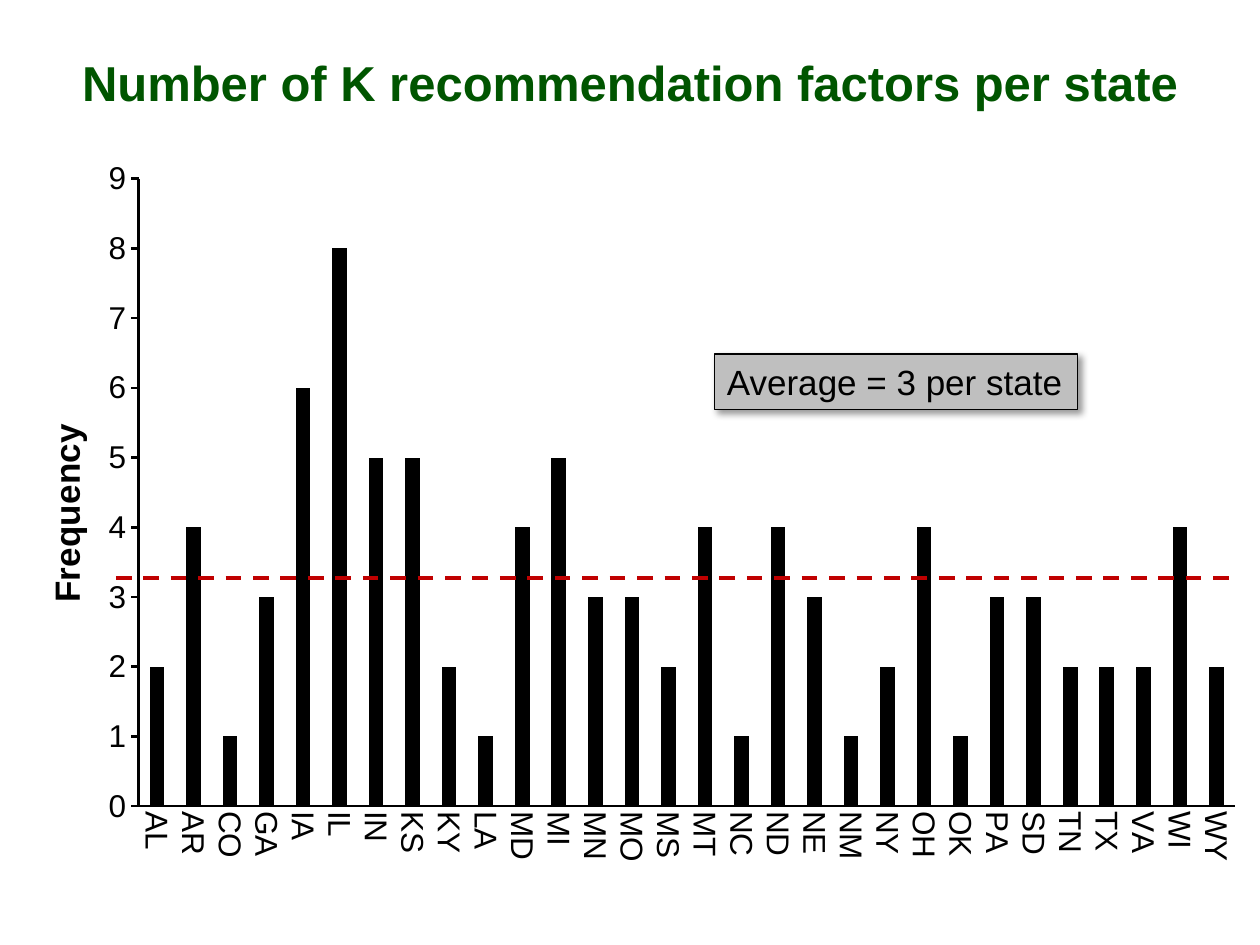
from lxml import etree
from pptx import Presentation
from pptx.chart.data import CategoryChartData
from pptx.dml.color import RGBColor
from pptx.enum.chart import XL_CHART_TYPE as Kind, XL_TICK_MARK as Tick
from pptx.enum.dml import MSO_LINE as Dash
from pptx.enum.shapes import MSO_CONNECTOR as Link, MSO_SHAPE as Shape
from pptx.enum.text import MSO_ANCHOR as Anchor, PP_ALIGN as Align
from pptx.oxml import parse_xml
from pptx.oxml.ns import nsdecls, qn
from pptx.util import Inches, Pt

FONT = "Arial"
COLORS = {"ink": "000000", "title": "005500", "mean": "C00000", "note": "BFBFBF"}
COUNTS = {
    "AL": 2, "AR": 4, "CO": 1, "GA": 3, "IA": 6, "IL": 8, "IN": 5, "KS": 5,
    "KY": 2, "LA": 1, "MD": 4, "MI": 5, "MN": 3, "MO": 3, "MS": 2, "MT": 4,
    "NC": 1, "ND": 4, "NE": 3, "NM": 1, "NY": 2, "OH": 4, "OK": 1, "PA": 3,
    "SD": 3, "TN": 2, "TX": 2, "VA": 2, "WI": 4, "WY": 2,
}


def color(name):
    return RGBColor.from_string(COLORS[name])


def style(font, size, name="ink", bold=False):
    font.name, font.size, font.bold = FONT, Pt(size), bold
    font.color.rgb = color(name)


def stroke(line, name, width):
    line.color.rgb = color(name)
    line.width = Pt(width)


def lay_out(part, index, **spots):
    """Give a chart part a manual layout, in fractions of the chart."""
    for old in part.findall(qn("c:layout")):
        part.remove(old)
    layout = etree.Element(qn("c:layout"))
    manual = etree.SubElement(layout, qn("c:manualLayout"))
    if "w" in spots:
        etree.SubElement(manual, qn("c:layoutTarget")).set("val", "inner")
    for key in "xy":
        etree.SubElement(manual, qn(f"c:{key}Mode")).set("val", "edge")
    for key, value in spots.items():
        etree.SubElement(manual, qn(f"c:{key}")).set("val", str(value))
    part.insert(index, layout)


def add_title(slide, box):
    frame = slide.shapes.add_textbox(*map(Inches, box)).text_frame
    frame.word_wrap = True
    frame.vertical_anchor = Anchor.MIDDLE
    frame.margin_left = frame.margin_right = 0
    par = frame.paragraphs[0]
    par.text = "Number of K recommendation factors per state"
    par.alignment = Align.CENTER
    style(par.font, 28, "title", True)


def style_axis(axis, tick):
    axis.has_major_gridlines = False
    axis.major_tick_mark, axis.minor_tick_mark = tick, Tick.NONE
    stroke(axis.format.line, "ink", 1.5)
    style(axis.tick_labels.font, 18)


def add_bars(slide, box):
    data = CategoryChartData()
    data.categories = list(COUNTS)
    data.add_series("Series 1", list(COUNTS.values()))
    chart = slide.shapes.add_chart(
        Kind.COLUMN_CLUSTERED, *map(Inches, box), data).chart
    chart.has_legend = chart.has_title = False
    style(chart.font, 10)

    plot = chart.plots[0]
    plot.gap_width = 150
    plot.vary_by_categories = False
    fill = plot.series[0].format.fill
    fill.solid()
    fill.fore_color.rgb = color("ink")

    states, scale = chart.category_axis, chart.value_axis
    style_axis(states, Tick.NONE)
    turn = states._element.find(qn("c:txPr")).find(qn("a:bodyPr"))
    turn.set("rot", "5400000")
    turn.set("vert", "horz")
    style_axis(scale, Tick.OUTSIDE)
    scale.minimum_scale, scale.maximum_scale, scale.major_unit = 0, 9, 1

    frame = scale.axis_title.text_frame
    frame.text = "Frequency"
    style(frame.paragraphs[0].font, 20, bold=True)
    turn = frame._txBody.find(qn("a:bodyPr"))
    turn.set("rot", "-5400000")
    turn.set("vert", "horz")
    lay_out(scale.axis_title._element, 1, x=0.03, y=0.37)
    area = chart._chartSpace.chart.plotArea
    lay_out(area, 0, x=0.11, y=0.043, w=0.87, h=0.86)


def add_mean(slide, left, right, top):
    line = slide.shapes.add_connector(
        Link.STRAIGHT, *map(Inches, (left, top, right, top)))
    stroke(line.line, "mean", 2.25)
    line.line.dash_style = Dash.DASH
    etree.SubElement(line._element.spPr, qn("a:effectLst"))


def add_note(slide, box):
    note = slide.shapes.add_shape(Shape.RECTANGLE, *map(Inches, box))
    note.fill.solid()
    note.fill.fore_color.rgb = color("note")
    stroke(note.line, "ink", 0.75)
    note._element.spPr.append(parse_xml(
        f'<a:effectLst {nsdecls("a")}><a:outerShdw blurRad="{Pt(4)}" '
        f'dist="{Pt(3)}" dir="2700000" algn="tl" rotWithShape="0">'
        f'<a:srgbClr val="{COLORS["ink"]}"><a:alpha val="40000"/></a:srgbClr>'
        '</a:outerShdw></a:effectLst>'))
    frame = note.text_frame
    frame.word_wrap = False
    par = frame.paragraphs[0]
    par.text = "Average = 3 per state"
    par.alignment = Align.LEFT
    style(par.font, 20)


def main():
    deck = Presentation()
    deck.slide_width, deck.slide_height = Inches(10), Inches(7.5)
    slide = deck.slides.add_slide(deck.slide_layouts[6])
    add_bars(slide, (0, 1.17, 10, 5.79))
    add_mean(slide, 0.92, 9.83, 4.59)
    add_note(slide, (5.67, 2.81, 2.88, 0.44))
    add_title(slide, (0.5, 0.3, 9, 0.7))
    deck.save("out.pptx")


if __name__ == "__main__":
    main()
